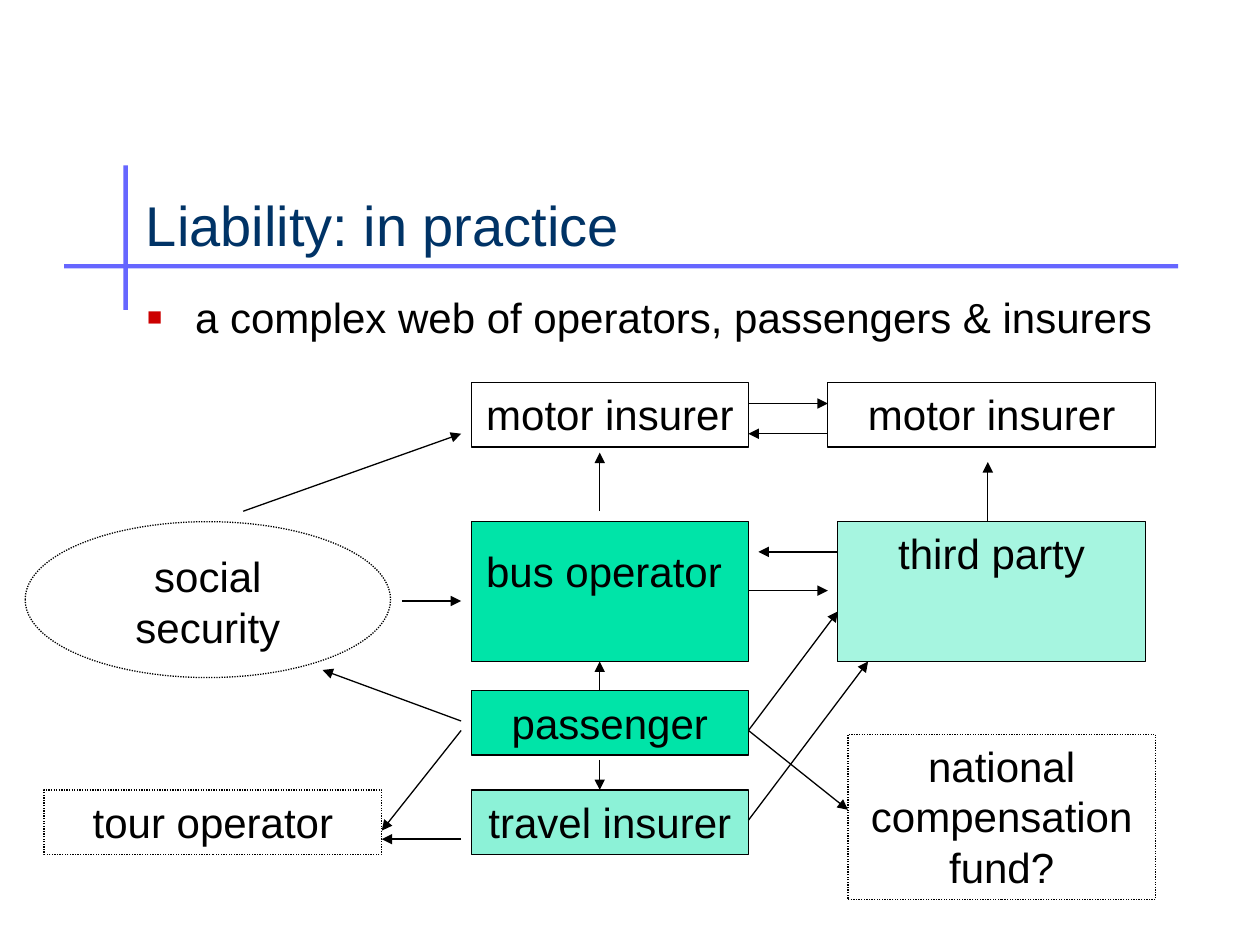
import pptx
import pptx.dml.color
import pptx.enum.dml
import pptx.enum.shapes
import pptx.enum.text
import pptx.oxml
import pptx.oxml.ns
import pptx.util

RGBColor = pptx.dml.color.RGBColor
SHAPE = pptx.enum.shapes.MSO_SHAPE
ANCHOR = pptx.enum.text.MSO_ANCHOR
ALIGN = pptx.enum.text.PP_ALIGN
DOT = pptx.enum.dml.MSO_LINE.ROUND_DOT

BLACK = RGBColor(0x00, 0x00, 0x00)
NAVY = RGBColor(0x00, 0x33, 0x66)
VIOLET = RGBColor(0x66, 0x66, 0xFF)
GREEN = RGBColor(0x00, 0xE4, 0xA8)

WIDTH, HEIGHT = pptx.util.Inches(10), pptx.util.Inches(7.5)

# Columns and rows of the diagram, in percent of the slide's width and height
MID, MID_W = 37.4, 22
MID_END = MID + MID_W
MID_IN = 36.6          # where arrows stop short of the middle column
MID_AXIS = 47.6
RIGHT = 65.7
THIRD = 66.5
FUND = 67.3
TOUR_END = 30.3
INSURERS, OPERATORS, PASSENGER, TRAVEL = 40.5, 55.2, 73.1, 83.6
LINE_H, TALL_H = 6.8, 14.8
OPERATORS_END = OPERATORS + TALL_H

# text, shape, (left, top, width, height), fill opacity, dotted outline
BOXES = [
    ("bus operator ", SHAPE.RECTANGLE, (MID, OPERATORS, MID_W, TALL_H), 100, False),
    ("passenger", SHAPE.RECTANGLE, (MID, PASSENGER, MID_W, LINE_H), 100, False),
    ("motor insurer", SHAPE.RECTANGLE, (MID, INSURERS, MID_W, LINE_H), 0, False),
    ("travel insurer", SHAPE.RECTANGLE, (MID, TRAVEL, MID_W, LINE_H), 45, False),
    ("third party", SHAPE.RECTANGLE, (THIRD, OPERATORS, 24.4, TALL_H), 35, False),
    ("motor insurer", SHAPE.RECTANGLE, (RIGHT, INSURERS, 26, LINE_H), 0, False),
    ("national compensation fund?", SHAPE.RECTANGLE, (FUND, 77.7, 24.4, 17.5), 0, True),
    ("social security", SHAPE.OVAL, (2, OPERATORS, 29, 16.5), 0, True),
    ("tour operator", SHAPE.RECTANGLE, (3.5, TRAVEL, 26.8, LINE_H), 0, True),
]

# start x, start y, end x, end y
ARROWS = [
    (MID_END, 77.3, FUND, 85.7),
    (MID_END, 77.3, THIRD, 64.7),
    (78.4, OPERATORS, 78.4, 48.9),
    (MID_END, 42.7, RIGHT, 42.7),
    (19.3, 54.1, MID_IN, 45.9),
    (31.9, 63.6, MID_IN, 63.6),
    (MID_IN, 76.3, 25.6, 70.9),
    (RIGHT, 45.9, MID_END, 45.9),
    (MID_END, 62.5, RIGHT, 62.5),
    (THIRD, 58.4, 60.2, 58.4),
    (MID_END, 86.8, 68.9, OPERATORS_END),
    (MID_IN, 77.3, TOUR_END, 87.9),
    (MID_AXIS, 54.1, MID_AXIS, 47.9),
    (MID_AXIS, PASSENGER, MID_AXIS, OPERATORS_END),
    (MID_AXIS, 80.4, MID_AXIS, TRAVEL),
    (MID_IN, 88.8, TOUR_END, 88.8),
]


def place(a, b, c, d):
    """Turn percentages of the slide into two x, y pairs of lengths."""
    return [int(share * full / 100)
            for share, full in zip((a, b, c, d), (WIDTH, HEIGHT) * 2)]


def xml(parent, markup):
    parent.append(pptx.oxml.parse_xml(markup.replace(
        " ", f" {pptx.oxml.ns.nsdecls('a')} ", 1)))


def apply(target, formats):
    for name, value in formats.items():
        setattr(target, name, value)


def write(sp, text, size=24, color=BLACK, align=ALIGN.LEFT, **frame):
    tf = sp.text_frame
    apply(tf, {"word_wrap": True, "vertical_anchor": ANCHOR.TOP, **frame})
    p = tf.paragraphs[0]
    p.alignment = align
    r = p.add_run()
    r.text = text
    apply(r.font, {"name": "Arial", "size": pptx.util.Pt(size)})
    r.font.color.rgb = color
    return p


def add_bar(s, *area):
    sp = s.shapes.add_shape(SHAPE.RECTANGLE, *place(*area))
    sp.shadow.inherit = False
    sp.fill.solid()
    sp.fill.fore_color.rgb = VIOLET
    sp.line.fill.background()


def add_text(s, text, area, **formats):
    return write(s.shapes.add_textbox(*place(*area)), text, **formats)


def add_bullet(p):
    pPr = p._p.get_or_add_pPr()
    indent = pptx.util.Inches(0.38)
    pPr.set("marL", str(indent))
    pPr.set("indent", str(-indent))
    xml(pPr, '<a:buClr ><a:srgbClr val="CC0000"/></a:buClr>')
    xml(pPr, '<a:buSzPct val="60000"/>')
    xml(pPr, '<a:buFont typeface="Arial"/>')
    xml(pPr, '<a:buChar char="■"/>')


def add_box(s, text, kind, area, opacity, dotted):
    sp = s.shapes.add_shape(kind, *place(*area))
    sp.shadow.inherit = False
    if opacity:
        sp.fill.solid()
        sp.fill.fore_color.rgb = GREEN
        if opacity < 100:
            color = sp.fill._xPr.find(".//" + pptx.oxml.ns.qn("a:srgbClr"))
            xml(color, f'<a:alpha val="{opacity * 1000}"/>')
    else:
        sp.fill.background()
    sp.line.color.rgb = BLACK
    sp.line.width = pptx.util.Pt(0.75)
    if dotted:
        sp.line.dash_style = DOT
    write(sp, text, align=ALIGN.CENTER)
    return sp


def add_arrow(s, *ends):
    line = s.shapes.add_connector(
        pptx.enum.shapes.MSO_CONNECTOR.STRAIGHT, *place(*ends))
    line.line.color.rgb = BLACK
    line.line.width = pptx.util.Pt(0.75)
    xml(line.line._get_or_add_ln(), '<a:tailEnd type="triangle"/>')
    xml(line._element.spPr, "<a:effectLst />")


def main():
    prs = pptx.Presentation()
    prs.slide_width, prs.slide_height = WIDTH, HEIGHT
    s = prs.slides.add_slide(prs.slide_layouts[6])
    add_bar(s, 9.8, 17.5, 0.35, 15.3)
    add_bar(s, 5.1, 27.95, 88.4, 0.45)
    add_text(s, "Liability: in practice", (10.6, 12.1, 82.7, 15.8),
             size=32, color=NAVY, vertical_anchor=ANCHOR.BOTTOM)
    add_bullet(add_text(s, "a complex web of operators, passengers & insurers",
                        (10.7, 30.2, 82.7, 59.8)))
    boxes = [add_box(s, *box) for box in BOXES]
    bus_operator = boxes[0]
    bus_operator.text_frame.margin_top = pptx.util.Inches(0.19)
    for ends in ARROWS:
        add_arrow(s, *ends)
    prs.save("out.pptx")


if __name__ == "__main__":
    main()
